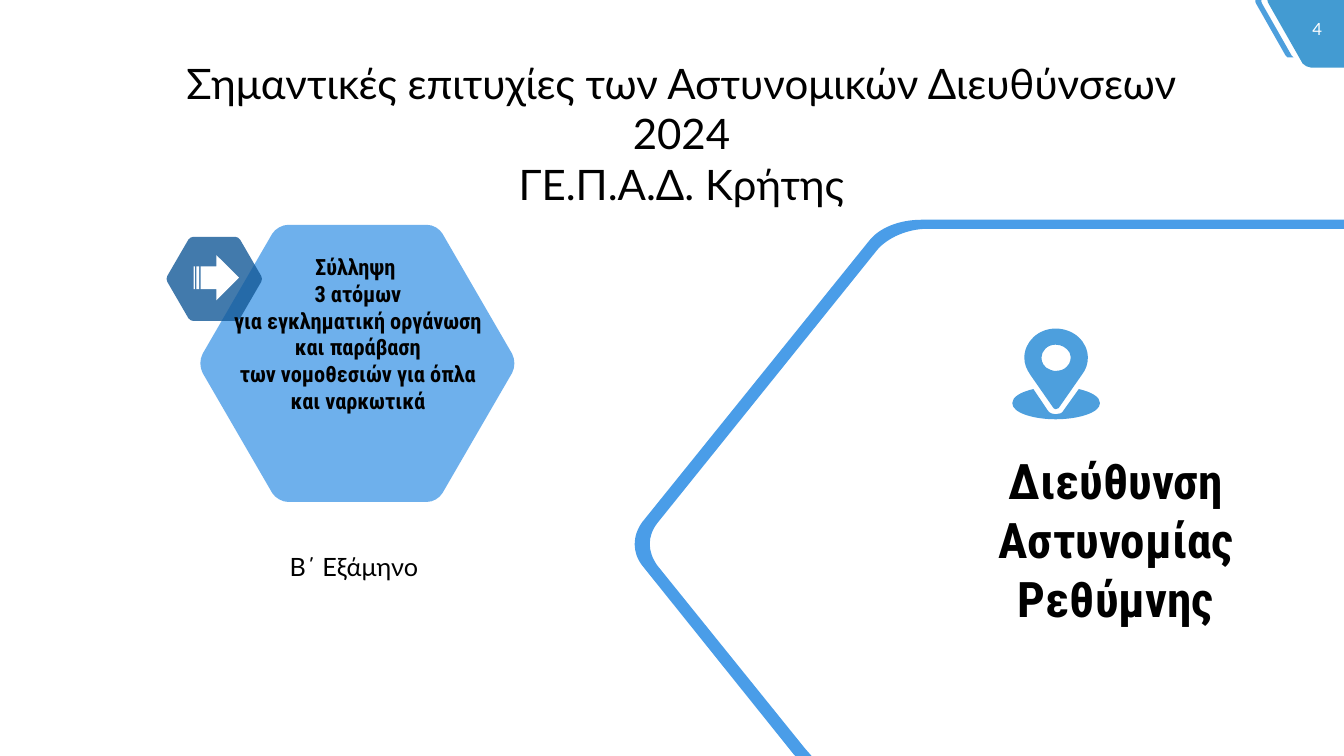
import pptx
import pptx.util
import pptx.dml.color
import pptx.enum.shapes
import pptx.enum.text
import pptx.oxml.ns
import lxml.etree

Inches = pptx.util.Inches
Pt = pptx.util.Pt
qn = pptx.oxml.ns.qn

COLORS = {
    "corner": "1483C7",
    "accent": "4D9FDD",
    "panel": "4A9DE8",
    "badge": "135998",
    "white": "FFFFFF",
    "black": "000000",
}

CORNER = [
    (12.57, 0), (13.33, 0), (13.33, 0.67), (13, 0.67),
    (12.97, 0.67, 12.94, 0.65, 12.92, 0.63),
    (12.59, 0.05), (12.58, 0.03, 12.57, 0.02, 12.57, 0),
]
STRIPE = [
    (12.45, 0), (12.51, 0), (12.51, 0.01, 12.51, 0.03, 12.52, 0.04),
    (12.81, 0.55), (12.82, 0.56, 12.82, 0.56, 12.83, 0.57), (12.77, 0.57),
    (12.76, 0.56, 12.76, 0.56, 12.75, 0.55),
    (12.46, 0.04), (12.45, 0.03, 12.45, 0.01, 12.45, 0),
]
HEXAGON = [
    (0.72, 2.66), (0.03, 1.47), (0, 1.41, 0, 1.34, 0.03, 1.28),
    (0.72, 0.09), (0.75, 0.04, 0.82, 0, 0.88, 0),
    (2.25, 0), (2.32, 0, 2.38, 0.04, 2.41, 0.09),
    (3.1, 1.28), (3.13, 1.34, 3.13, 1.41, 3.1, 1.47),
    (2.41, 2.66), (2.38, 2.71, 2.32, 2.75, 2.25, 2.75),
    (0.88, 2.75), (0.82, 2.75, 0.75, 2.71, 0.72, 2.66),
]
PANEL = [
    (13.33, 2.27), (9.2, 2.27), (9, 2.27, 8.8, 2.36, 8.7, 2.48),
    (6.52, 5.19), (6.42, 5.32, 6.42, 5.47, 6.52, 5.61),
    (7.98, 7.42), (8.05, 7.5), (7.89, 7.5), (7.87, 7.48),
    (6.37, 5.61), (6.27, 5.48, 6.27, 5.32, 6.37, 5.18),
    (8.62, 2.39), (8.72, 2.26, 8.92, 2.18, 9.14, 2.18), (13.33, 2.18),
]
PIN_HOLE = [
    (10.47, 3.42), (10.53, 3.42, 10.58, 3.45, 10.61, 3.5),
    (10.63, 3.55, 10.62, 3.6, 10.58, 3.64),
    (10.55, 3.67, 10.51, 3.68, 10.47, 3.68),
    (10.46, 3.68, 10.44, 3.68, 10.42, 3.67),
    (10.36, 3.65, 10.33, 3.6, 10.33, 3.55),
    (10.33, 3.48, 10.39, 3.42, 10.47, 3.42),
]
PIN = [
    (10.47, 3.26), (10.3, 3.26, 10.16, 3.39, 10.16, 3.55),
    (10.16, 3.61, 10.18, 3.66, 10.22, 3.72), (10.45, 4.05),
    (10.46, 4.06, 10.46, 4.06, 10.47, 4.06),
    (10.48, 4.06, 10.49, 4.06, 10.5, 4.05), (10.73, 3.72),
    (10.77, 3.67, 10.79, 3.61, 10.79, 3.55),
    (10.79, 3.39, 10.65, 3.26, 10.47, 3.26),
]
PIN_BASE = [
    (10.25, 3.86), (10.12, 3.89, 10.04, 3.94, 10.04, 4),
    (10.04, 4.1, 10.26, 4.16, 10.47, 4.16),
    (10.68, 4.16, 10.91, 4.1, 10.91, 4),
    (10.91, 3.94, 10.83, 3.89, 10.7, 3.86), (10.55, 4.07),
    (10.54, 4.1, 10.5, 4.11, 10.47, 4.11),
    (10.44, 4.11, 10.41, 4.1, 10.39, 4.07),
]

BADGE_SCALE = 0.95 / 3.13
FRAME_OUTLINES = [
    {"contours": [CORNER], "color": "corner", "opacity": 80},
    {"contours": [STRIPE], "color": "accent"},
]
HEXAGON_OUTLINES = [
    {"contours": [HEXAGON], "color": "panel", "opacity": 80, "origin": (1.98, 2.23)},
    {"contours": [HEXAGON], "color": "badge", "opacity": 80, "origin": (1.65, 2.35),
     "scale": BADGE_SCALE},
]
PANEL_OUTLINES = [
    {"contours": [PANEL], "color": "panel"},
    {"contours": [PIN_HOLE, PIN], "color": "accent"},
    {"contours": [PIN_BASE], "color": "accent"},
]
ARROW_SIZE = 0.45
BACK_ARROWS = [(5.09, 2.67)]
FRONT_ARROWS = [(1.92, 2.53), (8.72, 2.66)]

LATO = {"name": "Lato", "bold": False}
ROBOTO = {"name": "Roboto Condensed", "bold": True}
TEXTS = [
    (["4"], (12.86, 0.14, 0.41, 0.3), "white", {**LATO, "size": Pt(12)}, 0.1),
    (["Σημαντικές επιτυχίες των Αστυνομικών Διευθύνσεων 2024\vΓΕ.Π.Α.Δ. Κρήτης"],
     (1.26, 0.52, 11, 1.11), "black", {**LATO, "size": Pt(30)}, 0.1),
    (["Β΄ Εξάμηνο"], (2.2, 5.42, 2.62, 0.4), "black", {**LATO, "size": Pt(18)}, 0.1),
    (["Σύλληψη ", "3 ατόμων", "για εγκληματική οργάνωση και παράβαση",
      "των νομοθεσιών για όπλα και ναρκωτικά"],
     (2.12, 2.46, 2.86, 1.99), "black", {**ROBOTO, "size": Pt(16)}, 0.1),
    (["Διεύθυνση Αστυνομίας Ρεθύμνης"],
     (9.32, 4.42, 3.5, 1.87), "black", {**ROBOTO, "size": Pt(35)}, 0.1),
]


def rgb(name):
    return pptx.dml.color.RGBColor.from_string(COLORS[name])


def paint(shape, color, opacity=100):
    shape.shadow.inherit = False
    shape.fill.solid()
    shape.fill.fore_color.rgb = rgb(color)
    shape.line.fill.background()
    if opacity < 100:
        color_node = shape.fill._xPr.find(qn("a:solidFill")).find(qn("a:srgbClr"))
        lxml.etree.SubElement(color_node, qn("a:alpha")).set("val", str(opacity * 1000))


def round_corners(shape, contours):
    nodes = iter(list(next(shape._element.iter(qn("a:path")))))
    for contour in contours:
        next(nodes)
        for segment in contour[1:]:
            lines = [next(nodes) for _ in range(len(segment) // 2)]
            if len(lines) == 3:
                lines[0].tag = qn("a:cubicBezTo")
                for line in lines[1:]:
                    lines[0].append(line[0])
                    line.getparent().remove(line)
        next(nodes)


def add_outline(slide, contours, color, opacity=100, origin=(0, 0), scale=1):
    builder = None
    for contour in contours:
        points = [(Inches(origin[0] + scale * segment[i]),
                   Inches(origin[1] + scale * segment[i + 1]))
                  for segment in contour for i in range(0, len(segment), 2)]
        if builder is None:
            builder = slide.shapes.build_freeform(*points[0], scale=1.0)
        else:
            builder.move_to(*points[0])
        builder.add_line_segments(points[1:], close=True)
    shape = builder.convert_to_shape()
    round_corners(shape, contours)
    paint(shape, color, opacity)


def add_arrow(slide, left, top):
    box = map(Inches, (left, top, ARROW_SIZE, ARROW_SIZE))
    kind = pptx.enum.shapes.MSO_SHAPE.STRIPED_RIGHT_ARROW
    paint(slide.shapes.add_shape(kind, *box), "white")


def add_text(slide, lines, box, color, font_format, side_margin):
    frame = slide.shapes.add_textbox(*map(Inches, box)).text_frame
    frame_format = {
        "word_wrap": True,
        "margin_left": Inches(side_margin),
        "margin_right": Inches(side_margin),
        "vertical_anchor": pptx.enum.text.MSO_ANCHOR.TOP,
    }
    for attribute, value in frame_format.items():
        setattr(frame, attribute, value)
    for index, line in enumerate(lines):
        paragraph = frame.add_paragraph() if index else frame.paragraphs[0]
        paragraph.text = line
        paragraph.alignment = pptx.enum.text.PP_ALIGN.CENTER
        for run in paragraph.runs:
            for attribute, value in font_format.items():
                setattr(run.font, attribute, value)
            run.font.color.rgb = rgb(color)


def main():
    presentation = pptx.Presentation()
    presentation.slide_width = Inches(13.33)
    presentation.slide_height = Inches(7.5)
    slide = presentation.slides.add_slide(presentation.slide_layouts[6])
    layers = [(FRAME_OUTLINES, BACK_ARROWS), (HEXAGON_OUTLINES, FRONT_ARROWS), (PANEL_OUTLINES, [])]
    for outlines, arrows in layers:
        for outline in outlines:
            add_outline(slide, **outline)
        for left, top in arrows:
            add_arrow(slide, left, top)
    for text in TEXTS:
        add_text(slide, *text)
    presentation.save("out.pptx")


if __name__ == "__main__":
    main()
